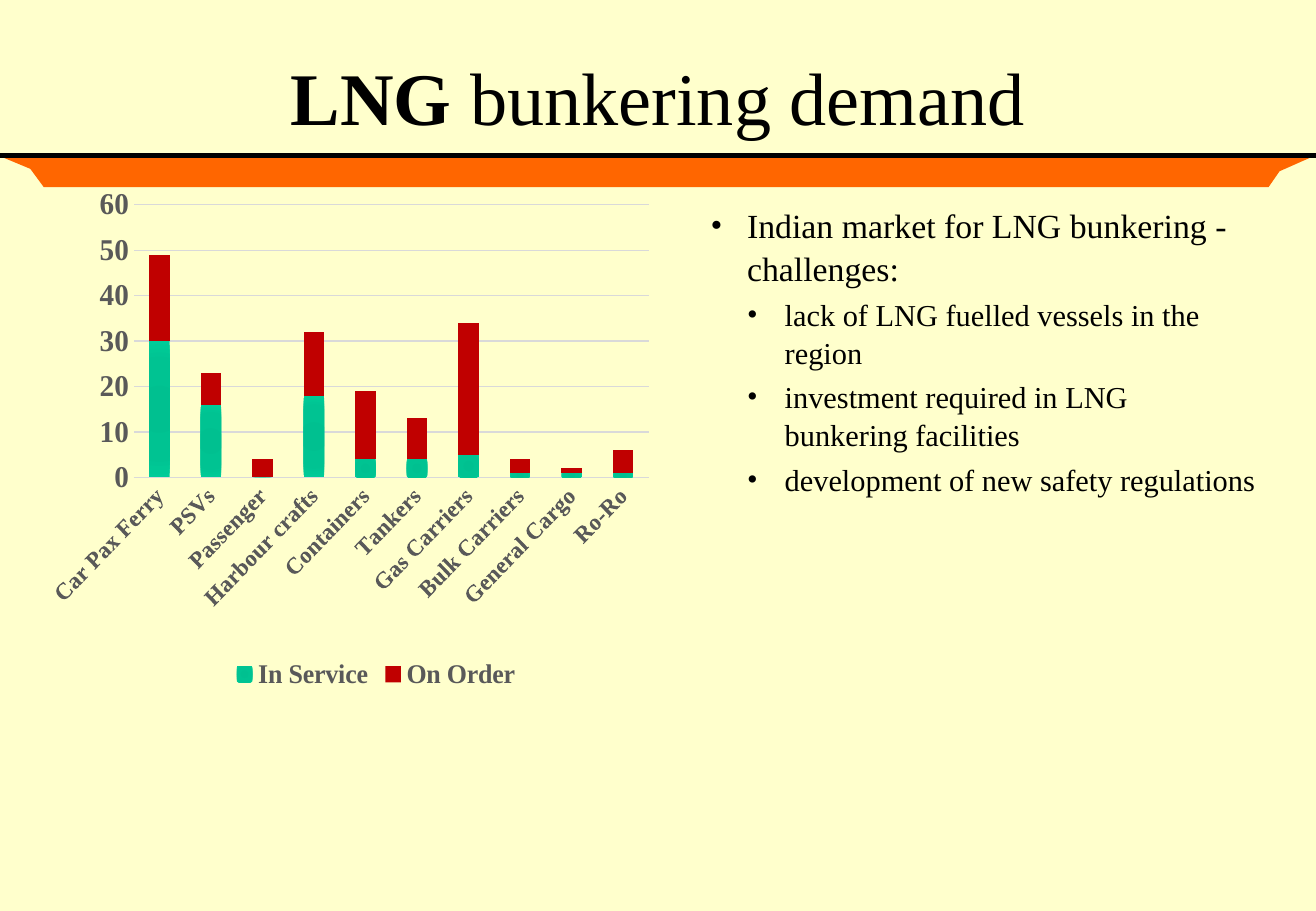
from lxml import etree
from pptx import Presentation
from pptx import util as u
from pptx.chart import data as chart_data
from pptx.dml.color import RGBColor
from pptx.enum import chart as chart_enum
from pptx.enum import shapes, text
from pptx.oxml import parse_xml
from pptx.oxml.ns import nsdecls, qn

COLOURS = {
    "paper": "FFFFCC", "band": "FF6600", "ink": "000000", "label": "595959",
    "grid": "D9D9D9", "service": "00C090", "order": "C00000",
}
SERVICE_STOPS = [(0, "00BE8F"), (34, "00C090"), (70, "00C392"), (100, "00CC99")]
BAND = [(0.01, 1.29), (10.8, 1.29), (10.53, 1.41), (10.44, 1.54), (0.36, 1.54), (0.25, 1.39)]
VESSELS = ["Car Pax Ferry", "PSVs", "Passenger", "Harbour crafts", "Containers",
           "Tankers", "Gas Carriers", "Bulk Carriers", "General Cargo", "Ro-Ro"]
FLEET = {
    "In Service": [30, 16, 0, 18, 4, 4, 5, 1, 1, 1],
    "On Order": [19, 7, 4, 14, 15, 9, 29, 3, 1, 5],
}
CHALLENGES = [
    (0, "Indian market for LNG bunkering - challenges:"),
    (1, "lack of LNG fuelled vessels in the region"),
    (1, "investment required in LNG bunkering facilities"),
    (1, "development of new safety regulations"),
]


def colour(name):
    return RGBColor.from_string(COLOURS[name])


def style_font(font, size, ink="ink", bold=False):
    font.name, font.size, font.bold = "Times New Roman", u.Pt(size), bold
    font.color.rgb = colour(ink)


def write(paragraph, words, **style):
    run = paragraph.add_run()
    run.text = words
    style_font(run.font, **style)


class Deck:
    """Holds the slide style and the current slide."""

    def __init__(self, width, height):
        self.file = Presentation()
        self.file.slide_width, self.file.slide_height = u.Inches(width), u.Inches(height)
        self.slide = self.file.slides.add_slide(self.file.slide_layouts[5])
        self.slide.background.fill.solid()
        self.slide.background.fill.fore_color.rgb = colour("paper")

    def band(self, points):
        corners = [(u.Inches(x), u.Inches(y)) for x, y in points]
        builder = self.slide.shapes.build_freeform(*corners[0])
        builder.add_line_segments(corners[1:], close=True)
        band = builder.convert_to_shape()
        band.shadow.inherit = False
        band.fill.solid()
        band.fill.fore_color.rgb = colour("band")
        band.line.fill.background()

    def rule(self, y, weight):
        rule = self.slide.shapes.add_connector(
            shapes.MSO_CONNECTOR.STRAIGHT, 0, u.Inches(y), self.file.slide_width, u.Inches(y))
        rule.line.color.rgb = colour("ink")
        rule.line.width = u.Pt(weight)
        etree.SubElement(rule._element.spPr, qn("a:effectLst"))

    def title(self, place, parts):
        title = self.slide.shapes.title
        title.left, title.top, title.width, title.height = map(u.Inches, place)
        frame = title.text_frame
        frame.vertical_anchor = text.MSO_ANCHOR.TOP
        frame.margin_top = u.Inches(0.12)
        heading = frame.paragraphs[0]
        heading.alignment = text.PP_ALIGN.CENTER
        for words, bold in parts:
            write(heading, words, size=44, bold=bold)

    def bullets(self, place, items):
        frame = self.slide.shapes.add_textbox(*map(u.Inches, place)).text_frame
        frame.word_wrap = True
        for number, (level, words) in enumerate(items):
            item = frame.add_paragraph() if number else frame.paragraphs[0]
            size = 20 - 2 * level
            item.level = level
            item.line_spacing = 1.05
            item.space_before = u.Pt(0.2 * size if number else 0)
            props = item._p.get_or_add_pPr()
            indent = 0.3 + 0.01 * level
            props.set("marL", str(u.Inches(0.3 + 0.31 * level)))
            props.set("indent", str(-u.Inches(indent)))
            etree.SubElement(props, qn("a:buFont")).set("typeface", "Times New Roman")
            etree.SubElement(props, qn("a:buChar")).set("char", "•")
            write(item, words, size=size)

    def stacked_chart(self, place, categories, series):
        data = chart_data.CategoryChartData()
        data.categories = categories
        for name, values in series.items():
            data.add_series(name, values)
        chart = self.slide.shapes.add_chart(
            chart_enum.XL_CHART_TYPE.COLUMN_STACKED, *map(u.Inches, place), data).chart
        style_font(chart.font, 10)
        chart.has_title = False
        chart.has_legend = True
        chart.legend.position = chart_enum.XL_LEGEND_POSITION.BOTTOM
        chart.legend.include_in_layout = False
        style_font(chart.legend.font, 16, "label", True)
        self.axes(chart)
        plot = chart.plots[0]
        plot.gap_width, plot.overlap, plot.vary_by_categories = 150, 100, False
        for bars, fill in zip(plot.series, ("service", "order")):
            bars.format.fill.solid()
            bars.format.fill.fore_color.rgb = colour(fill)
        self.radial_fill(plot.series[0], SERVICE_STOPS)
        self.plot_area(chart, x=0.1, y=0.03, w=0.85, h=0.54)

    def axes(self, chart):
        for axis, size in ((chart.category_axis, 14), (chart.value_axis, 18)):
            axis.major_tick_mark = axis.minor_tick_mark = chart_enum.XL_TICK_MARK.NONE
            style_font(axis.tick_labels.font, size, "label", True)
        vessels, count = chart.category_axis, chart.value_axis
        vessels.format.line.color.rgb = colour("grid")
        vessels.format.line.width = u.Pt(1)
        vessels._element.find(qn("c:txPr")).find(qn("a:bodyPr")).set("rot", "-2700000")
        count.minimum_scale, count.maximum_scale, count.major_unit = 0, 60, 10
        count.format.line.fill.background()
        count.major_gridlines.format.line.color.rgb = colour("grid")
        count.major_gridlines.format.line.width = u.Pt(0.75)

    def radial_fill(self, bars, stops):
        marks = "".join(f'<a:gs pos="{pos * 1000}"><a:srgbClr val="{shade}"/></a:gs>'
                        for pos, shade in stops)
        gradient = parse_xml(
            f'<a:gradFill {nsdecls("a")} rotWithShape="1"><a:gsLst>{marks}</a:gsLst>'
            '<a:path path="circle"><a:fillToRect l="100000" t="100000" r="100000" b="100000"/>'
            '</a:path></a:gradFill>')
        properties = bars._element.find(qn("c:spPr"))
        properties.replace(properties.find(qn("a:solidFill")), gradient)

    def plot_area(self, chart, **box):
        area = chart._chartSpace.chart.plotArea
        for old in area.findall(qn("c:layout")):
            area.remove(old)
        settings = {"layoutTarget": "inner", "xMode": "edge", "yMode": "edge", **box}
        rows = "".join(f'<c:{key} val="{value}"/>' for key, value in settings.items())
        area.insert(0, parse_xml(
            f'<c:layout {nsdecls("c")}><c:manualLayout>{rows}</c:manualLayout></c:layout>'))


def main():
    deck = Deck(10.83, 7.5)
    deck.band(BAND)
    deck.rule(1.28, 3)
    deck.title((0.54, 0.3, 9.75, 1.25), [("LNG ", True), ("bunkering demand", False)])
    deck.stacked_chart((0.4, 1.55, 5.19, 4.17), VESSELS, FLEET)
    deck.bullets((5.75, 1.62, 4.7, 3.78), CHALLENGES)
    deck.file.save("out.pptx")


if __name__ == "__main__":
    main()
